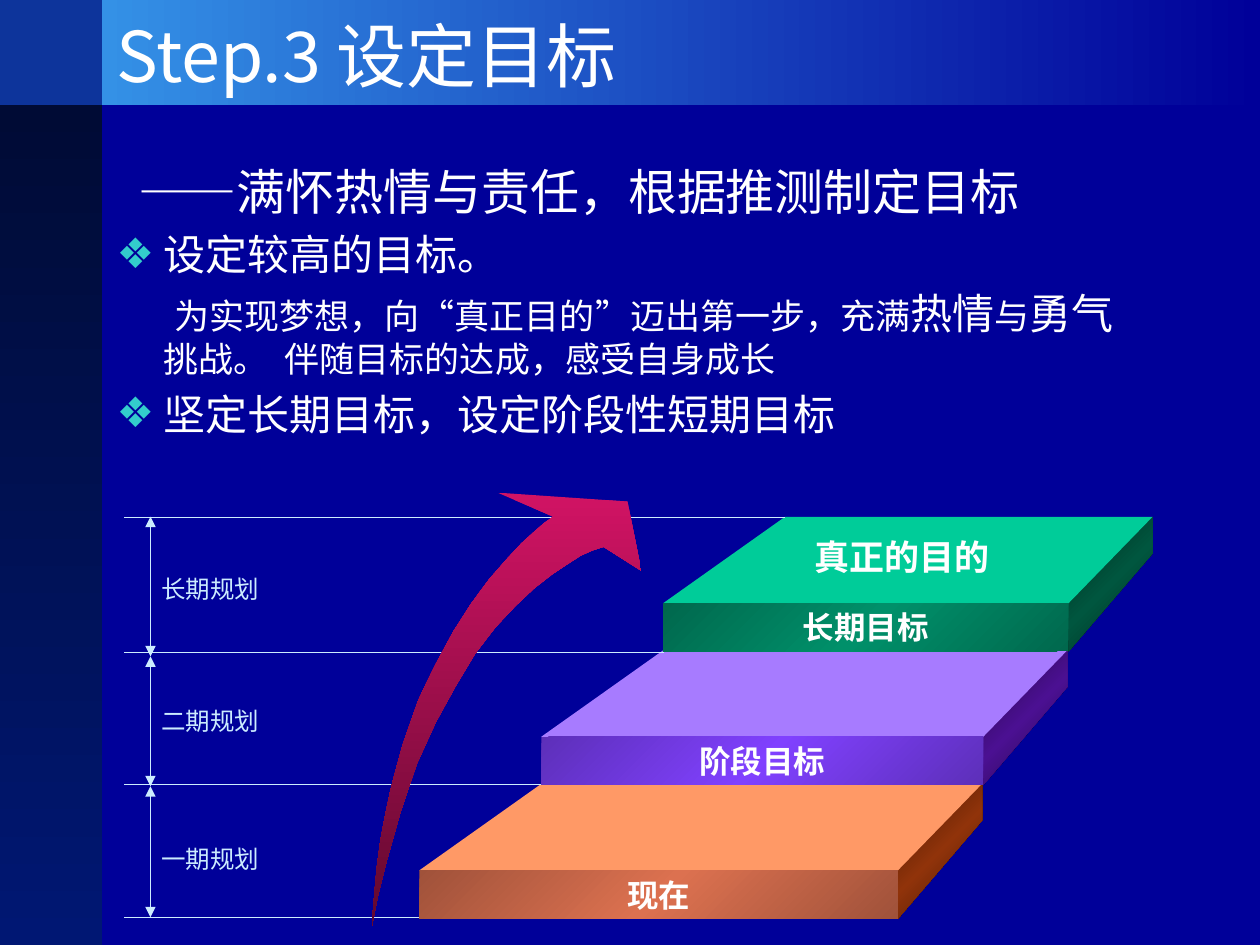
from copy import deepcopy

from lxml import etree
from pptx import Presentation
from pptx.dml.color import RGBColor
from pptx.enum.lang import MSO_LANGUAGE_ID
from pptx.enum.shapes import MSO_CONNECTOR, MSO_SHAPE
from pptx.enum.text import MSO_ANCHOR, MSO_AUTO_SIZE, PP_ALIGN
from pptx.oxml.ns import qn
from pptx.util import Pt

CHINESE = MSO_LANGUAGE_ID.SIMPLIFIED_CHINESE
STRAIGHT = MSO_CONNECTOR.STRAIGHT
RECTANGLE = MSO_SHAPE.RECTANGLE
MIDDLE, TOP = MSO_ANCHOR.MIDDLE, MSO_ANCHOR.TOP
NO_FIT, GROW = MSO_AUTO_SIZE.NONE, MSO_AUTO_SIZE.SHAPE_TO_FIT_TEXT
LEFT, CENTER = PP_ALIGN.LEFT, PP_ALIGN.CENTER
CJK, SANS = "Noto Sans CJK SC", "DejaVu Sans"

COLORS = {
    "background": "000099", "corner": "0D349B", "header": "3491E6",
    "sidebar_top": "000B35", "sidebar_bottom": "001773",
    "white": "FFFFFF", "bullet": "33CCCC", "guide": "CCECFF",
    "arrow_top": "D11364", "arrow_bottom": "61092E",
    "green": "00CC99", "green_edge": "00684D", "green_mid": "00906A",
    "green_dark": "00281D", "green_side": "00563F",
    "purple": "A77BFF", "purple_edge": "5D2FB9", "purple_mid": "8041FF",
    "purple_dark": "230744", "purple_side": "4B1092",
    "orange": "FF9966", "orange_edge": "A0523A", "orange_mid": "DC7150",
    "orange_dark": "431805", "orange_side": "90330A",
}
COLORS = {name: RGBColor.from_string(value) for name, value in COLORS.items()}


def paint(shape, names, angle=0):
    shape.shadow.inherit = False
    shape.line.fill.background()
    if len(names) == 1:
        shape.fill.solid()
        shape.fill.fore_color.rgb = COLORS[names[0]]
        return
    shape.fill.gradient()
    shape.fill.gradient_angle = -angle % 360
    stop_list = shape._element.spPr.find(".//" + qn("a:gsLst"))
    for _ in names[2:]:
        stop_list.append(deepcopy(stop_list[-1]))
    for index, (stop, name) in enumerate(zip(shape.fill.gradient_stops, names)):
        stop.color.rgb = COLORS[name]
        stop.position = index / (len(names) - 1)


def write(para, text, color, **formats):
    span = para.add_run()
    span.text = text
    span.font.color.rgb = COLORS[color]
    for key, value in {"language_id": CHINESE, **formats}.items():
        setattr(span.font, key, value)
    etree.SubElement(span._r.get_or_add_rPr(), qn("a:ea"), typeface=CJK)


deck = Presentation()
deck.slide_width, deck.slide_height = Pt(720), Pt(540)
page = deck.slides.add_slide(deck.slide_layouts[1])
shapes = page.shapes
page.background.fill.solid()
page.background.fill.fore_color.rgb = COLORS["background"]

bars = [
    ((57.6, 0, 662.4, 60), ["header", "background"], 0),
    ((0, 60, 58.2, 480), ["sidebar_top", "sidebar_bottom"], 90),
    ((0, 0, 58.2, 60), ["corner"], 0),
]
for frame, names, angle in bars:
    paint(shapes.add_shape(RECTANGLE, *map(Pt, frame)), names, angle)

title, body = shapes.title, page.placeholders[1]
placeholders = [
    (title, (59.4, 9, 588.2, 44.6), MIDDLE),
    (body, (59.4, 88.6, 588.2, 187.2), TOP),
]
for box, frame, anchor in placeholders:
    shapes._spTree.append(box._element)
    for key, value in zip(("left", "top", "width", "height"), frame):
        setattr(box, key, Pt(value))
    formats = {"auto_size": NO_FIT, "vertical_anchor": anchor, "word_wrap": True}
    for key, value in formats.items():
        setattr(box.text_frame, key, value)

title_para = title.text_frame.paragraphs[0]
title_para.alignment = LEFT
write(title_para, "Step.3 设定目标", "white", size=Pt(40), name=CJK)

body_lines = [
    (False, 12.7, 0, [("——满怀热情与责任，根据推测制定目标", 28)]),
    (True, 27, -27, [("设定较高的目标。", 24)]),
    (False, 27, 6, [
        ("为实现梦想，向“真正目的”迈出第一步，充满", 20), ("热情", 24),
        ("与", 20), ("勇气", 24), ("挑战。  伴随目标的达成，感受自身成长", 20),
    ]),
    (True, 27, -27, [("坚定长期目标，设定阶段性短期目标", 24)]),
]
for index, (bulleted, margin, indent, spans) in enumerate(body_lines):
    frame = body.text_frame
    para = frame.add_paragraph() if index else frame.paragraphs[0]
    para.line_spacing = 1.0
    para.space_before = Pt(4.8 if index else 0)
    properties = para._p.get_or_add_pPr()
    properties.set("marL", str(Pt(margin)))
    properties.set("indent", str(Pt(indent)))
    if bulleted:
        bullet_color = etree.SubElement(properties, qn("a:buClr"))
        etree.SubElement(bullet_color, qn("a:srgbClr"), val=str(COLORS["bullet"]))
        etree.SubElement(properties, qn("a:buChar"), char="❖")
    else:
        etree.SubElement(properties, qn("a:buNone"))
    for text, size in spans:
        write(para, text, "white", size=Pt(size), name=CJK)

outlines, fronts = [], []
steps = [("green", "长期目标"), ("purple", "阶段目标"), ("orange", "现在")]
for index, (hue, text) in enumerate(steps):
    left, right = 378.9 - 69.6 * index, 610.6 - 48.7 * index
    top = 295.3 + 76.3 * index
    back_left, back_right = left + 69.7, right + 48
    front, bottom = top + 49.4, top + 77
    side = [(back_right, top + 21), (right, bottom), (right, front), (back_right, top)]
    surface = [(right, front), (left, front), (back_left, top), (back_right, top)]
    outlines.append((side, [f"{hue}_dark", f"{hue}_side", f"{hue}_dark"], 45))
    outlines.append((surface, [hue], 0))
    fronts.append((text, hue, (left, front, right - left, bottom - front)))

arrow = [
    (212.4, 529.9), (213.8, 512.6), (215.3, 496.1), (217.4, 480.2), (220.3, 465.1),
    (223.2, 451.4), (226.8, 437.8), (230.4, 424.8), (234.7, 412.6), (239, 400.3),
    (244.1, 389.5), (249.1, 379.4), (259.2, 360.7), (269.3, 344.9), (279.4, 331.2),
    (289.4, 319.7), (298.1, 310.3), (305.3, 303.8), (311, 298.8), (316.1, 295.2),
    (284.4, 281.5), (358.6, 286.6), (366.5, 326.2), (344.9, 312.5), (338.4, 314.6),
    (331.9, 317.5), (324, 322.6), (315.4, 328.3), (305.3, 336.2), (294.5, 346.3),
    (283, 358.6), (271.4, 373.7), (260.6, 391.7), (249.1, 412.6), (238.3, 436.3),
    (229, 463.7), (220.3, 494.6), (216, 511.9),
]
outlines.append((arrow, ["arrow_top", "arrow_bottom"], 90))

level_ends = [(448.6, 295.9), (379.4, 372.7), (309.6, 448.3), (239.8, 524.2)]
guides = [((x, y), (70.6, y), False) for x, y in level_ends]
marks = [295.2, 375.1, 449.3, 524.2]
guides += [((86, start), (86, end), True) for start, end in zip(marks, marks[1:])]

for points, names, angle in outlines:
    if points is arrow:
        for start, end, arrowed in guides:
            guide = shapes.add_connector(STRAIGHT, *map(Pt, start + end))
            guide.line.color.rgb = COLORS["guide"]
            guide.line.width = Pt(0.75)
            if arrowed:
                for tag in ("a:headEnd", "a:tailEnd"):
                    etree.SubElement(guide.line._ln, qn(tag), type="triangle")
            etree.SubElement(guide._element.spPr, qn("a:effectLst"))
    vertices = [(Pt(x), Pt(y)) for x, y in points]
    builder = shapes.build_freeform(*vertices[0])
    builder.add_line_segments(vertices[1:], close=True)
    paint(builder.convert_to_shape(), names, angle)

labels = []
for text, hue, frame in fronts:
    box = shapes.add_shape(RECTANGLE, *map(Pt, frame))
    paint(box, [f"{hue}_edge", f"{hue}_mid", f"{hue}_edge"], 45)
    labels.append((box, text, 18, "white", True))
periods = [("长期规划", 324.7), ("二期规划", 399.9), ("一期规划", 478.8)]
for text, top in periods:
    box = shapes.add_textbox(Pt(85), Pt(top), Pt(70.6), Pt(23.8))
    labels.append((box, text, 14, "guide", False))
purpose = shapes.add_textbox(Pt(399.6), Pt(303.8), Pt(231.8), Pt(28))
labels.append((purpose, "真正的目的", 20, "white", True))

for box, text, size, color, strong in labels:
    formats = {
        "word_wrap": False,
        "auto_size": NO_FIT if strong else GROW,
        "vertical_anchor": MIDDLE if strong else TOP,
    }
    for key, value in formats.items():
        setattr(box.text_frame, key, value)
    para = box.text_frame.paragraphs[0]
    para.alignment = CENTER if strong else LEFT
    write(para, text, color, size=Pt(size), name=SANS, bold=strong)

deck.save("out.pptx")
